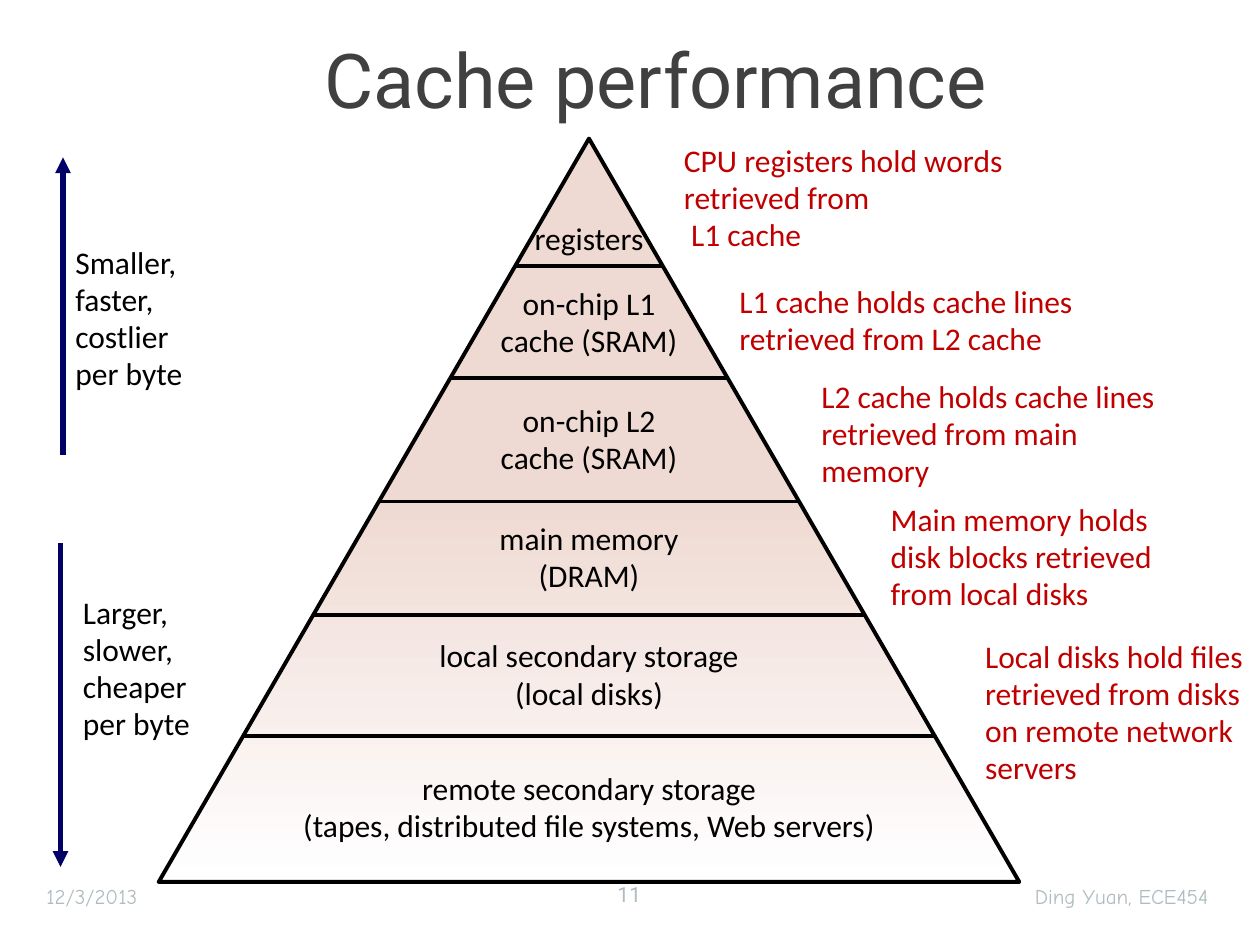
"""Build the slide showing the memory hierarchy pyramid for cache performance."""
from copy import deepcopy

from lxml.etree import SubElement
from pptx import Presentation
from pptx.dml.color import RGBColor
from pptx.enum.shapes import MSO_CONNECTOR, MSO_SHAPE
from pptx.enum.text import MSO_ANCHOR, MSO_AUTO_SIZE, PP_ALIGN
from pptx.oxml.ns import qn
from pptx.util import Inches, Pt

BLACK = RGBColor(0x00, 0x00, 0x00)
WHITE = RGBColor(0xFF, 0xFF, 0xFF)
NAVY = RGBColor(0x00, 0x00, 0x66)
RED = RGBColor(0xC0, 0x00, 0x00)
CHARCOAL = RGBColor(0x40, 0x40, 0x40)
MIST = RGBColor(0xB0, 0xBC, 0xC1)
PEACH = RGBColor(0xEF, 0xDA, 0xD3)

LEFT, CENTER, RIGHT = PP_ALIGN.LEFT, PP_ALIGN.CENTER, PP_ALIGN.RIGHT
BODY = {"name": "Calibri", "size": Pt(18)}
FOOTER = {"name": "Comic Neue", "size": Pt(12), "color": MIST}

PYRAMID = (1.26, 1.1, 6.83, 5.9)
PYRAMID_STOPS = [(0, PEACH), (0.49, PEACH), (1, WHITE)]
DIVIDERS = [2.11, 3.0, 3.98, 4.88, 5.84]

LEVELS = [
    (["registers"], 1.9, 1.09),
    (["on-chip L1", "cache (SRAM)"], 2.56, 1.64),
    (["on-chip L2", "cache (SRAM)"], 3.49, 1.64),
    (["main memory", "(DRAM)"], 4.43, 1.66),
    (["local secondary storage", "(local disks)"], 5.36, 2.64),
    (["remote secondary storage",
      "(tapes, distributed file systems, Web servers)"], 6.41, 4.88),
]

NOTES = [
    ("CPU registers hold words retrieved from\v L1 cache", (5.33, 1.08, 3.19, 0.99)),
    ("L1 cache holds cache lines retrieved from L2 cache", (5.77, 2.2, 3.1, 0.7)),
    ("L2 cache holds cache lines retrieved from main memory", (6.42, 2.95, 2.88, 0.99)),
    ("Main memory holds disk blocks retrieved from local disks", (6.97, 3.93, 2.61, 0.99)),
    ("Local disks hold files retrieved from disks on remote network servers",
     (7.72, 5.01, 2.26, 1.29)),
]

TRENDS = [
    (["Smaller,", "faster,", "costlier", "per byte"], (0.5, 1.66, 1.07, 1.74), (0.5, 3.61, 1.25)),
    (["Larger,", "slower,", "cheaper", "per byte"], (0.56, 4.44, 1.1, 1.74), (0.48, 4.31, 6.88)),
]

HEADINGS = [
    ("Cache performance", (0.44, 0.19, 9.53, 0.86), CENTER,
     {"name": "Roboto", "size": Pt(43.2), "color": CHARCOAL}),
    ("12/3/2013", (0.27, 6.97, 2.33, 0.28), LEFT, FOOTER),
    ("Ding Yuan, ECE454", (6.52, 6.97, 3.17, 0.28), RIGHT, FOOTER),
    ("11", (4.58, 6.95, 0.83, 0.3), CENTER, {**FOOTER, "name": "Roboto"}),
]


def add_text(slide, lines, place, align, style, wrap=True, spacing=1.0, fit=MSO_AUTO_SIZE.NONE):
    frame = slide.shapes.add_textbox(*map(Inches, place)).text_frame
    frame_format = {"word_wrap": wrap, "auto_size": fit, "vertical_anchor": MSO_ANCHOR.MIDDLE}
    for attribute, value in frame_format.items():
        setattr(frame, attribute, value)
    frame.text = "\n".join(lines)
    for paragraph in frame.paragraphs:
        paragraph.alignment = align
        paragraph.line_spacing = spacing
        for run in paragraph.runs:
            for attribute, value in style.items():
                if attribute == "color":
                    run.font.color.rgb = value
                else:
                    setattr(run.font, attribute, value)


def add_body(slide, lines, place, align, color, wrap):
    add_text(slide, lines, place, align, {**BODY, "color": color}, wrap, 0.98,
             MSO_AUTO_SIZE.SHAPE_TO_FIT_TEXT)


def add_line(slide, start, end, color, width, arrow=False):
    connector = slide.shapes.add_connector(MSO_CONNECTOR.STRAIGHT, *map(Inches, start + end))
    connector.line.color.rgb = color
    connector.line.width = Pt(width)
    properties = connector._element.spPr
    if arrow:
        SubElement(properties.find(qn("a:ln")), qn("a:tailEnd"), type="triangle")
    SubElement(properties, qn("a:effectLst"))


def add_pyramid(slide):
    pyramid = slide.shapes.add_shape(MSO_SHAPE.ISOSCELES_TRIANGLE, *map(Inches, PYRAMID))
    pyramid.shadow.inherit = False
    pyramid.line.color.rgb = BLACK
    pyramid.line.width = Pt(2.25)
    pyramid.fill.gradient()
    pyramid.fill.gradient_angle = 270
    stop_list = pyramid._element.spPr.find(".//" + qn("a:gsLst"))
    stop_list.insert(1, deepcopy(stop_list[0]))
    for stop, (position, color) in zip(pyramid.fill.gradient_stops, PYRAMID_STOPS):
        stop.position = position
        stop.color.rgb = color


def main():
    presentation = Presentation()
    presentation.slide_width = Inches(10)
    presentation.slide_height = Inches(7.5)
    slide = presentation.slides.add_slide(presentation.slide_layouts[6])

    add_pyramid(slide)
    left, top, width, height = PYRAMID
    axis = left + width / 2
    for y in DIVIDERS:
        reach = (y - top) / height * width / 2
        add_line(slide, (axis - reach, y), (axis + reach, y), BLACK, 2)

    for lines, middle, label_width in LEVELS:
        label_height = 0.4 if len(lines) == 1 else 0.85
        place = (axis - label_width / 2, middle - label_height / 2, label_width, label_height)
        add_body(slide, lines, place, CENTER, BLACK, False)

    for note, place in NOTES:
        add_body(slide, [note], place, LEFT, RED, True)

    for lines, place, (x, start, end) in TRENDS:
        add_line(slide, (x, start), (x, end), NAVY, 3, arrow=True)
        add_body(slide, lines, place, LEFT, BLACK, False)

    for heading, place, align, style in HEADINGS:
        add_text(slide, [heading], place, align, style)

    presentation.save("out.pptx")


if __name__ == "__main__":
    main()
